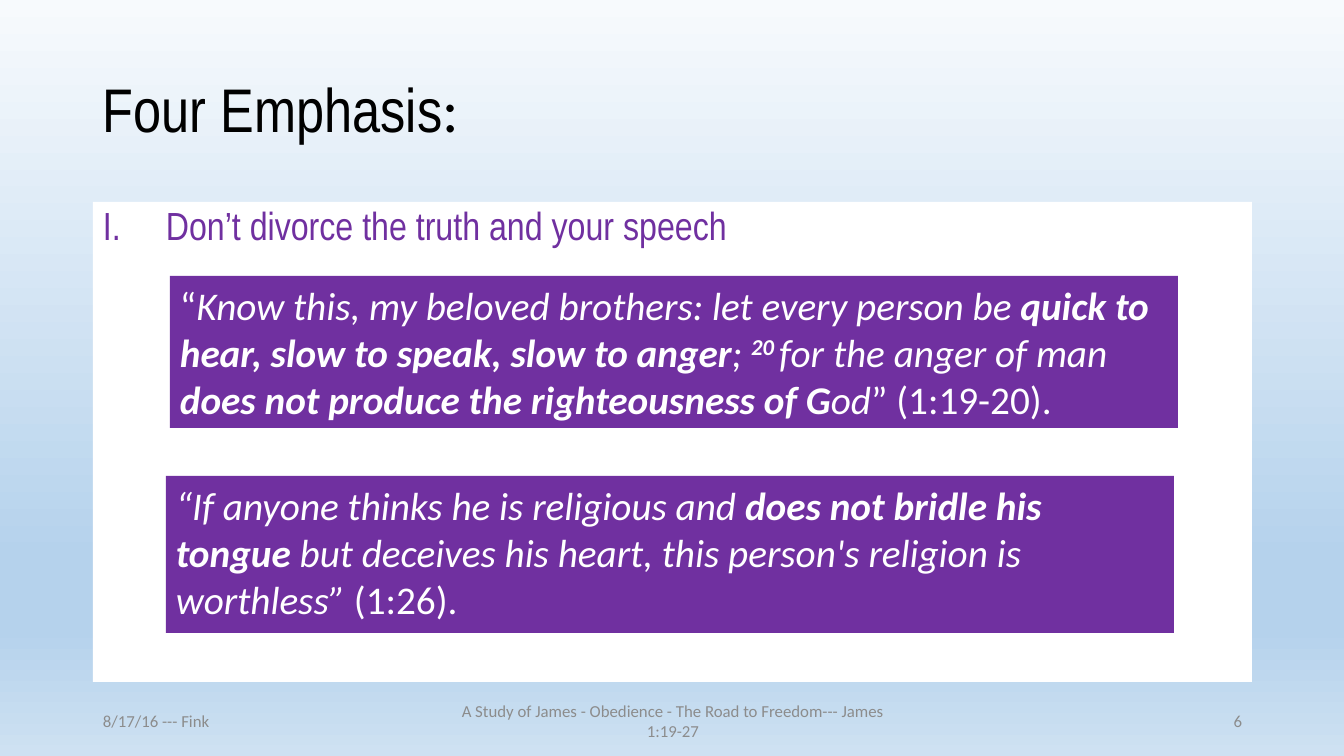
from dataclasses import dataclass

from lxml import etree
from pptx import Presentation
from pptx.dml.color import RGBColor
from pptx.enum.shapes import MSO_SHAPE
from pptx.enum.text import MSO_ANCHOR, MSO_AUTO_SIZE, PP_ALIGN
from pptx.oxml.ns import qn
from pptx.util import Pt

EMU_PER_PX = 914400 / 100.8
RECTANGLE = MSO_SHAPE.RECTANGLE
TOP, MIDDLE = MSO_ANCHOR.TOP, MSO_ANCHOR.MIDDLE
GROW = MSO_AUTO_SIZE.SHAPE_TO_FIT_TEXT
LEFT, CENTER, RIGHT = PP_ALIGN.LEFT, PP_ALIGN.CENTER, PP_ALIGN.RIGHT


@dataclass(frozen=True)
class Theme:
    heading_font: str = "Arial Narrow"
    text_font: str = "Calibri"
    title_size: int = 44
    body_size: int = 28
    footer_size: int = 12
    black: str = "000000"
    white: str = "FFFFFF"
    purple: str = "7030A0"
    grey: str = "8C8C8C"
    sky: tuple = ((0, "F7FAFD"), (74, "B5D2EC"), (83, "B5D2EC"), (100, "CEE1F2"))


THEME = Theme()

PLAIN, ITALIC, BOLD_ITALIC, VERSE_NUMBER = "plain", "italic", "bold italic", "verse number"

ANGER_QUOTE = [
    ("“", PLAIN),
    ("Know this, my beloved brothers: let every person be ", ITALIC),
    ("quick to hear, slow to speak, slow to anger", BOLD_ITALIC),
    ("; ", ITALIC),
    ("20 ", VERSE_NUMBER),
    ("for the anger of man ", ITALIC),
    ("does not produce the righteousness of G", BOLD_ITALIC),
    ("od", ITALIC),
    ("” (1:19-20).", PLAIN),
]
TONGUE_QUOTE = [
    ("“If anyone thinks he is religious and ", ITALIC),
    ("does not bridle his tongue ", BOLD_ITALIC),
    ("but deceives his heart, this person's religion is worthless” ", ITALIC),
    ("(1:26).", PLAIN),
]
FOOTERS = [
    ("8/17/16 --- Fink", 93, 302, LEFT),
    ("A Study of James - Obedience - The Road to Freedom--- James 1:19-27", 446, 454, CENTER),
    ("6", 950, 302, RIGHT),
]


def px(length):
    return round(length * EMU_PER_PX)


def paint_background(page):
    fill = page.background.fill
    fill.gradient()
    fill.gradient_angle = 270
    stops = page.element.find(".//" + qn("a:gsLst"))
    for stop in list(stops):
        stops.remove(stop)
    for percent, color in THEME.sky:
        stop = etree.SubElement(stops, qn("a:gs"), pos=str(percent * 1000))
        etree.SubElement(stop, qn("a:srgbClr"), val=color)


def add_text_box(page, *frame, anchor=MIDDLE):
    box = page.shapes.add_textbox(*map(px, frame))
    box.text_frame.word_wrap = True
    box.text_frame.vertical_anchor = anchor
    return box


def add_panel(page, color, *frame):
    """Add a borderless filled rectangle whose text starts at the top left."""
    panel = page.shapes.add_shape(RECTANGLE, *map(px, frame))
    panel.shadow.inherit = False
    panel.fill.solid()
    panel.fill.fore_color.rgb = RGBColor.from_string(color)
    panel.line.fill.background()
    panel.text_frame.word_wrap = True
    panel.text_frame.vertical_anchor = TOP
    return panel


def style_para(box, font, size, color, align=LEFT):
    para = box.text_frame.paragraphs[0]
    para.alignment = align
    para.font.name = font
    para.font.size = Pt(size)
    para.font.color.rgb = RGBColor.from_string(color)
    return para


def add_span(para, text):
    span = para.add_run()
    span.text = text
    return span


def add_title(page):
    box = add_text_box(page, 93, 40, 1159, 146)
    para = style_para(box, THEME.heading_font, THEME.title_size, THEME.black)
    para.line_spacing = 0.9
    add_span(para, "Four Emphasis")
    add_span(para, ":").font.name = THEME.text_font


def add_body(page):
    panel = add_panel(page, THEME.white, 93, 202, 1159, 480)
    para = style_para(panel, THEME.heading_font, THEME.body_size, THEME.purple)
    para.line_spacing = 0.9
    para.space_before = Pt(10)
    add_span(para, "Don’t divorce the truth and your speech")
    properties = para._p.get_or_add_pPr()
    properties.set("marL", str(px(63)))
    properties.set("indent", str(-px(63)))
    numbering = etree.Element(qn("a:buAutoNum"), type="romanUcPeriod")
    properties.find(qn("a:spcBef")).addnext(numbering)


def add_quote(page, spans, *frame):
    panel = add_panel(page, THEME.purple, *frame)
    panel.text_frame.auto_size = GROW
    para = style_para(panel, THEME.text_font, THEME.body_size, THEME.white)
    for text, style in spans:
        span = add_span(para, text)
        span.font.italic = style != PLAIN
        span.font.bold = style in (BOLD_ITALIC, VERSE_NUMBER)
        if style == VERSE_NUMBER:
            span._r.get_or_add_rPr().set("baseline", "30000")


def add_footer(page, text, left, width, align):
    box = add_text_box(page, left, 701, width, 40)
    para = style_para(box, THEME.text_font, THEME.footer_size, THEME.grey, align)
    add_span(para, text)


def main():
    deck = Presentation()
    deck.slide_width, deck.slide_height = px(1344), px(756)
    page = deck.slides.add_slide(deck.slide_layouts[6])
    paint_background(page)
    add_title(page)
    add_body(page)
    for footer in FOOTERS:
        add_footer(page, *footer)
    add_quote(page, ANGER_QUOTE, 170, 276, 1008, 152)
    add_quote(page, TONGUE_QUOTE, 166, 476, 1008, 157)
    deck.save("out.pptx")


if __name__ == "__main__":
    main()
